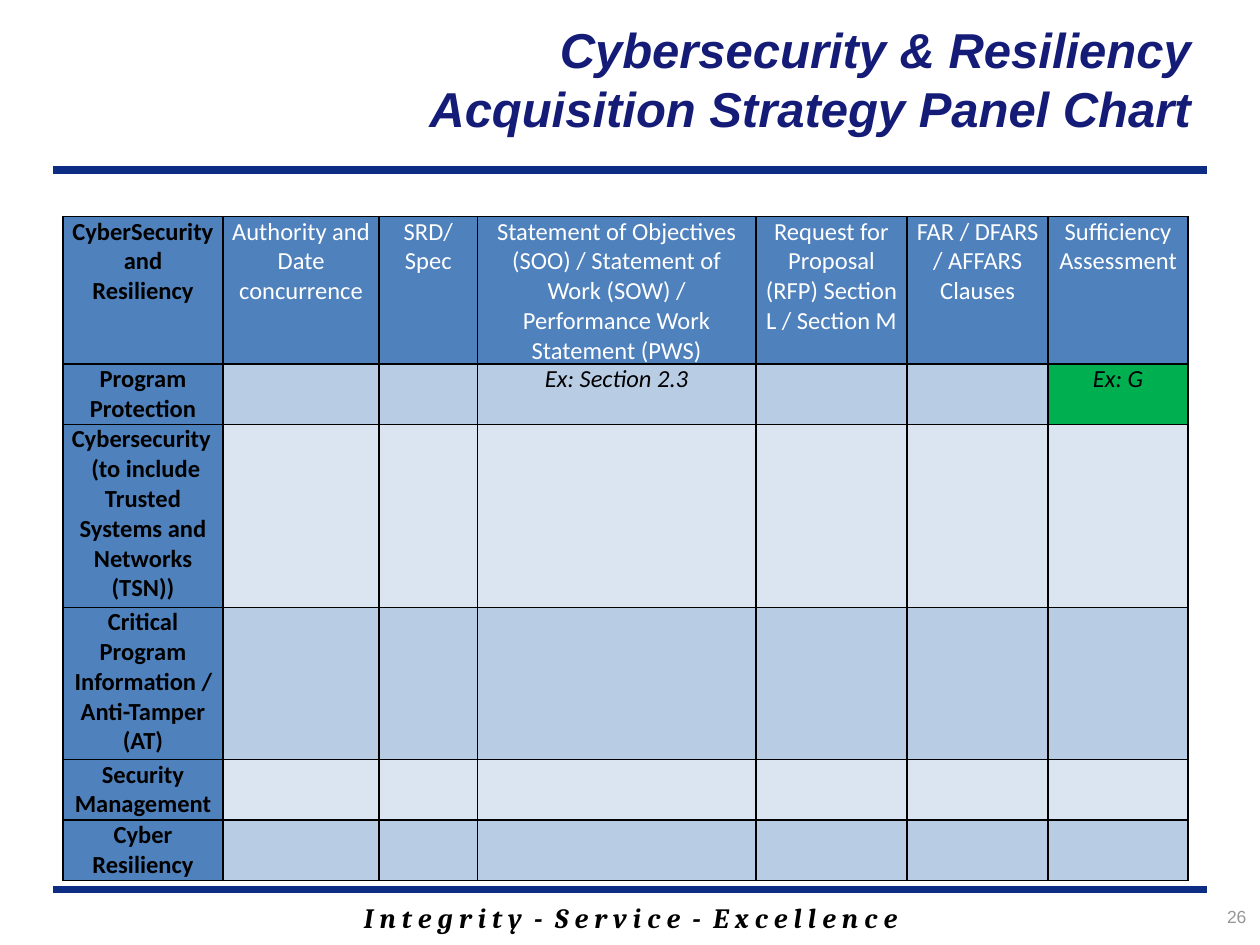
"""Build the cybersecurity acquisition strategy panel slide."""
import pptx
import pptx.util
import pptx.dml.color
import pptx.enum.shapes
import pptx.enum.text
import pptx.oxml
import lxml.etree

Inches = pptx.util.Inches
Pt = pptx.util.Pt
ALIGN = pptx.enum.text.PP_ALIGN
ANCHOR = pptx.enum.text.MSO_ANCHOR
NS = "http://schemas.openxmlformats.org/drawingml/2006/main"


def color(code):
    return pptx.dml.color.RGBColor.from_string(code)


def style(frame, align, font, size, code, bold=False, italic=False):
    for para in frame.paragraphs:
        para.alignment = align
        for run in para.runs:
            run.font.name = font
            run.font.size = Pt(size)
            run.font.color.rgb = color(code)
            run.font.bold = bold
            run.font.italic = italic


deck = pptx.Presentation()
deck.slide_width = Inches(10)
deck.slide_height = Inches(7.5)
slide = deck.slides.add_slide(deck.slide_layouts[5])

motto = slide.shapes.add_textbox(Inches(1.42), Inches(7.1), Inches(7.17), Inches(0.37))
motto.text_frame.word_wrap = True
motto.text_frame.text = "I n t e g r i t y  -  S e r v i c e  -  E x c e l l e n c e"
style(motto.text_frame, ALIGN.CENTER, "Cambria", 16, "000000", True, True)

for top in (7.06, 1.35):
    rule = slide.shapes.add_connector(
        pptx.enum.shapes.MSO_CONNECTOR.STRAIGHT,
        Inches(0.42), Inches(top), Inches(9.58), Inches(top))
    rule.line.color.rgb = color("0C2D83")
    rule.line.width = Pt(4.5)
    lxml.etree.SubElement(rule.line._get_or_add_ln().getparent(), f"{{{NS}}}effectLst")

title = slide.shapes.title
title.left, title.top = Inches(2.97), Inches(0)
title.width, title.height = Inches(6.58), Inches(1.25)
title.text_frame.text = "Cybersecurity & Resiliency Acquisition Strategy Panel Chart"
title.text_frame.word_wrap = True
title.text_frame.auto_size = pptx.enum.text.MSO_AUTO_SIZE.NONE
title.text_frame.vertical_anchor = ANCHOR.MIDDLE
style(title.text_frame, ALIGN.RIGHT, "Arial", 28, "151C77", True, True)

number = slide.shapes.add_textbox(Inches(8.74), Inches(7.14), Inches(1.25), Inches(0.33))
number.text_frame.word_wrap = True
number.text_frame.text = "26"
style(number.text_frame, ALIGN.RIGHT, "Arial", 10, "969696")

heads = [
    "CyberSecurity and Resiliency",
    "Authority and Date concurrence",
    "SRD/ Spec",
    "Statement of Objectives (SOO) / Statement of Work (SOW) / "
    "Performance Work Statement (PWS)",
    "Request for Proposal (RFP) Section L / Section M",
    "FAR / DFARS / AFFARS Clauses",
    "Sufficiency Assessment",
]
topics = [
    "Program Protection",
    "Cybersecurity\n (to include Trusted Systems and Networks (TSN))",
    "Critical Program Information /Anti-Tamper (AT)",
    "Security Management",
    "Cyber Resiliency",
]
samples = {(1, 3): "Ex: Section 2.3", (1, 6): "Ex: G"}
widths = [1.27, 1.24, 0.78, 2.21, 1.2, 1.12, 1.11]
heights = [1.17, 0.48, 1.45, 1.21, 0.48, 0.48]

table = slide.shapes.add_table(
    len(heights), len(widths), Inches(0.5), Inches(1.72),
    Inches(sum(widths)), Inches(sum(heights))).table
table.first_row = False
table.horz_banding = False
for col, width in zip(table.columns, widths):
    col.width = Inches(width)
for row, height in zip(table.rows, heights):
    row.height = Inches(height)

for r in range(len(heights)):
    for c in range(len(widths)):
        cell = table.cell(r, c)
        cell.margin_left = cell.margin_right = Inches(0.07)
        cell.margin_top = cell.margin_bottom = 0
        if r == 0:
            text = heads[c]
        elif c == 0:
            text = topics[r - 1]
        else:
            text = samples.get((r, c), "")
        cell.text_frame.text = text
        ink = "FFFFFF" if r == 0 and c > 0 else "000000"
        style(cell.text_frame, ALIGN.CENTER, "Calibri", 14, ink, c == 0, (r, c) in samples)
        props = cell._tc.get_or_add_tcPr()
        for side in ("lnL", "lnR", "lnT", "lnB"):
            props.append(pptx.oxml.parse_xml(
                f'<a:{side} xmlns:a="{NS}" w="12700"><a:solidFill>'
                f'<a:srgbClr val="000000"/></a:solidFill></a:{side}>'))
        if r == 0 or c == 0:
            fill = "4F81BD"
        elif (r, c) == (1, 6):
            fill = "00B050"
        else:
            fill = "B8CCE4" if r % 2 else "DBE5F1"
        cell.fill.solid()
        cell.fill.fore_color.rgb = color(fill)

table.cell(2, 0).text_frame.paragraphs[0].alignment = ALIGN.LEFT

deck.save("out.pptx")
